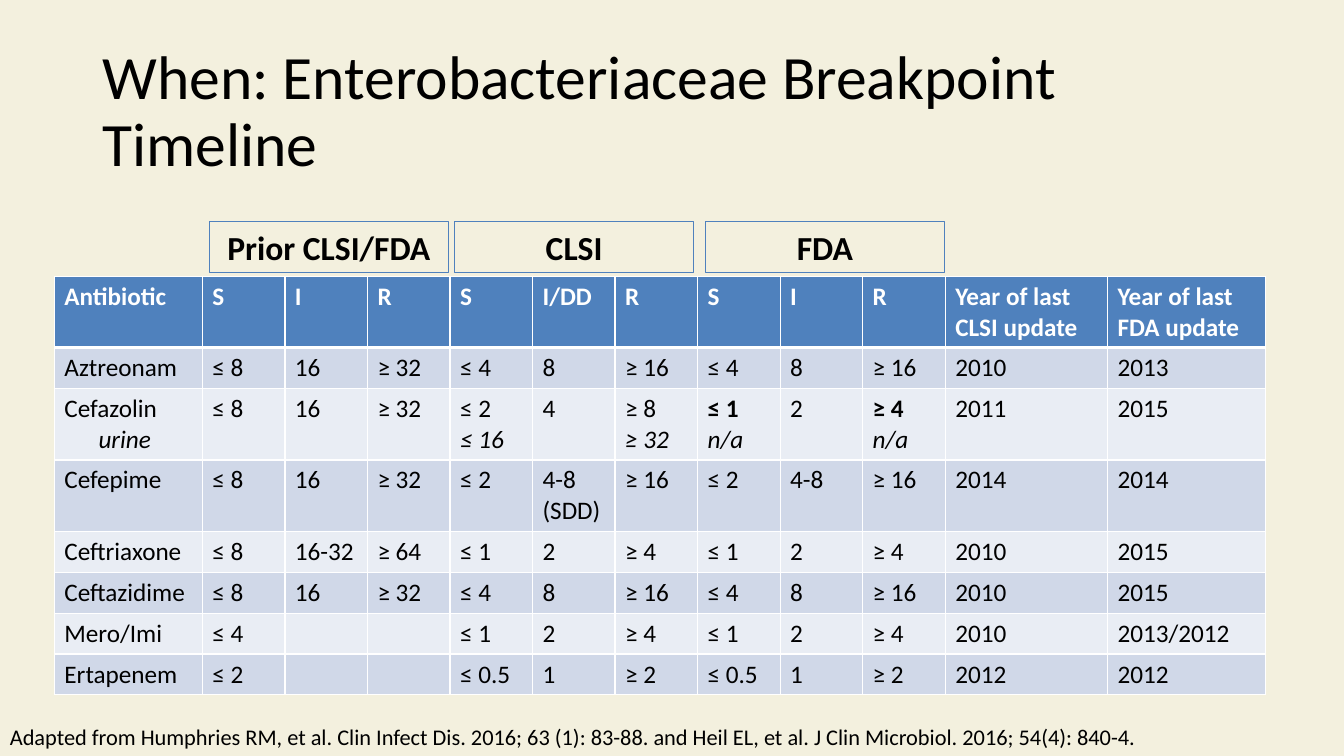
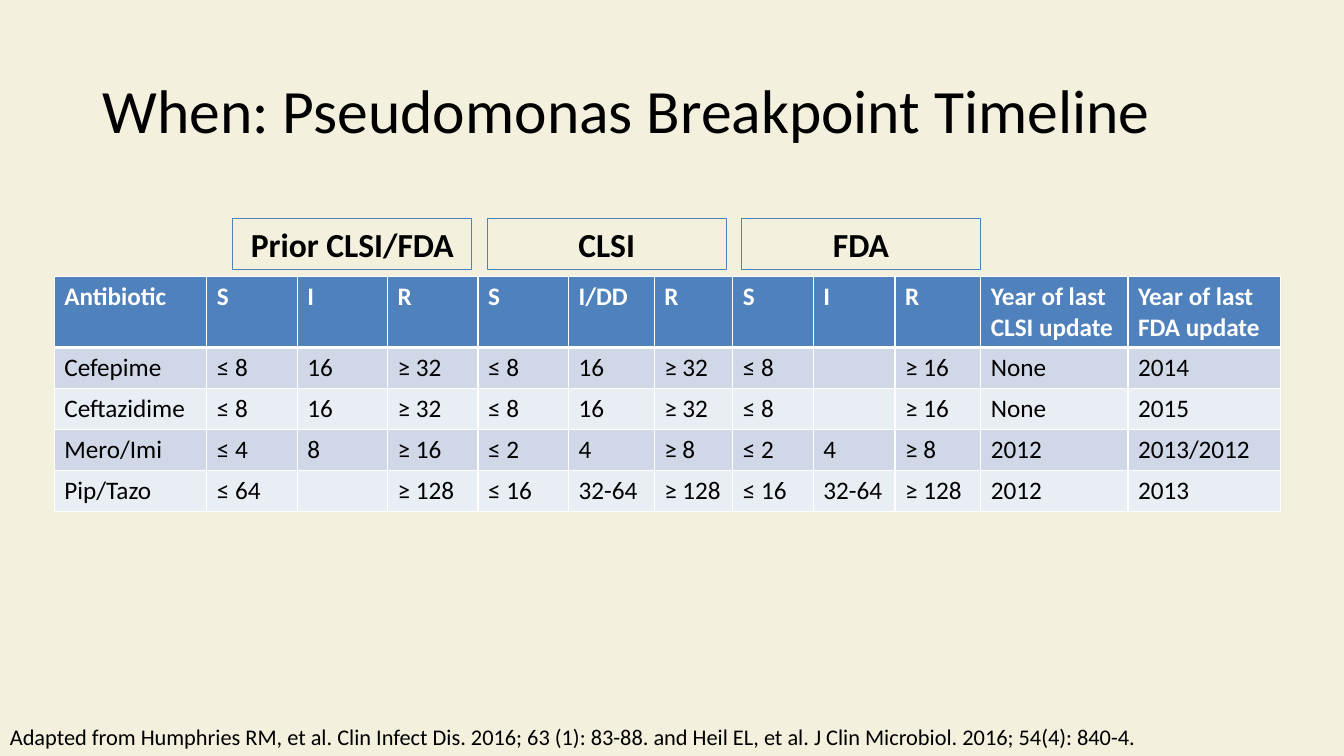
import pptx
import pptx.dml.color
import pptx.enum.shapes
import pptx.enum.text
import pptx.oxml
import pptx.oxml.ns
import pptx.util

Cm = pptx.util.Cm
Pt = pptx.util.Pt
RGB = pptx.dml.color.RGBColor
ALIGN = pptx.enum.text.PP_ALIGN
ANCHOR = pptx.enum.text.MSO_ANCHOR

# Shared look
CREAM = RGB(0xF3, 0xF0, 0xDE)
BLUE = RGB(0x4F, 0x81, 0xBD)
BAND = RGB(0xD0, 0xD8, 0xE8)
PALE = RGB(0xE9, 0xED, 0xF4)
BLACK = RGB(0, 0, 0)
WHITE = RGB(0xFF, 0xFF, 0xFF)
FONT = "Calibri"

# Shared wording
HEAD = "Antibiotic|S|I|R|S|I/DD|R|S|I|R|Year of last CLSI update|Year of last FDA update"
GROUPS = ["Prior CLSI/FDA", "CLSI", "FDA"]
CREDIT = ("Adapted from Humphries RM, et al. Clin Infect Dis. 2016; 63 (1): 83-88. "
          "and Heil EL, et al. J Clin Microbiol. 2016; 54(4): 840-4.")

# Row heights for one and two lines of text
LOW, TALL = 1.03, 1.8

# Content: cells split by |, lines by /n; a * marks a bold first line
SLIDES = [
    {
        "title": "When: Enterobacteriaceae Breakpoint Timeline",
        "cols": [3.73] + [2.08] * 9 + [4.09, 3.99],
        "tall": [0, 2, 3],
        "tops": 5.59,
        "lefts": [5.28, 11.46, 17.78],
        "rows": [
            "Aztreonam|≤ 8|16|≥ 32|≤ 4|8|≥ 16|≤ 4|8|≥ 16|2010|2013",
            "Cefazolin\nurine|≤ 8|16|≥ 32|≤ 2\n≤ 16|4|≥ 8\n≥ 32|*≤ 1\nn/a|2|*≥ 4\nn/a|2011|2015",
            "Cefepime|≤ 8|16|≥ 32|≤ 2|4-8 (SDD)|≥ 16|≤ 2|4-8|≥ 16|2014|2014",
            "Ceftriaxone|≤ 8|16-32|≥ 64|≤ 1|2|≥ 4|≤ 1|2|≥ 4|2010|2015",
            "Ceftazidime|≤ 8|16|≥ 32|≤ 4|8|≥ 16|≤ 4|8|≥ 16|2010|2015",
            "Mero/Imi|≤ 4|||≤ 1|2|≥ 4|≤ 1|2|≥ 4|2010|2013/2012",
            "Ertapenem|≤ 2|||≤ 0.5|1|≥ 2|≤ 0.5|1|≥ 2|2012|2012",
        ],
    },
    {
        "title": "When: Pseudomonas Breakpoint Timeline",
        "cols": [3.84] + [2.28] * 4 + [2.16, 1.98, 2.03, 2.06, 2.16, 3.71, 3.84],
        "tall": [0],
        "tops": 5.51,
        "lefts": [5.87, 12.28, 18.69],
        "rows": [
            "Cefepime|≤ 8|16|≥ 32|≤ 8|16|≥ 32|≤ 8||≥ 16|None|2014",
            "Ceftazidime|≤ 8|16|≥ 32|≤ 8|16|≥ 32|≤ 8||≥ 16|None|2015",
            "Mero/Imi|≤ 4|8|≥ 16|≤ 2|4|≥ 8|≤ 2|4|≥ 8|2012|2013/2012",
            "Pip/Tazo|≤ 64||≥ 128|≤ 16|32-64|≥ 128|≤ 16|32-64|≥ 128|2012|2013",
        ],
    },
]


def write(frame, text, size, color=BLACK, bold=False):
    """Fill a text frame and format every run in it."""
    frame.text = text
    frame.word_wrap = True
    for para in frame.paragraphs:
        for run in para.runs:
            run.font.name = FONT
            run.font.size = Pt(size)
            run.font.color.rgb = color
            run.font.bold = bold


def edge(cell, widths):
    """Draw white cell borders, widths in points by side."""
    props = cell._tc.get_or_add_tcPr()
    for side in "LRTB":
        props.append(pptx.oxml.parse_xml(
            f'<a:ln{side} {pptx.oxml.ns.nsdecls("a")} w="{Pt(widths[side])}">'
            f'<a:solidFill><a:srgbClr val="{WHITE}"/></a:solidFill></a:ln{side}>'))


deck = pptx.Presentation()
deck.slide_width, deck.slide_height = Cm(33.87), Cm(19.05)
back = deck.slide_master.background.fill
back.solid()
back.fore_color.rgb = CREAM

for data in SLIDES:
    slide = deck.slides.add_slide(deck.slide_layouts[6])
    shapes = slide.shapes

    # Title
    title = shapes.add_textbox(Cm(2.33), Cm(1.01), Cm(29.21), Cm(3.68)).text_frame
    write(title, data["title"], 44)
    title.vertical_anchor = ANCHOR.MIDDLE
    title.paragraphs[0].line_spacing = 0.9

    # Table
    rows = [line.split("|") for line in [HEAD] + data["rows"]]
    highs = [TALL if r in data["tall"] else LOW for r in range(len(rows))]
    table = shapes.add_table(len(rows), len(data["cols"]), Cm(1.37), Cm(6.96),
                             Cm(sum(data["cols"])), Cm(sum(highs))).table
    for col, width in zip(table.columns, data["cols"]):
        col.width = Cm(width)
    for r, row in enumerate(rows):
        table.rows[r].height = Cm(highs[r])
        for c, text in enumerate(row):
            cell = table.cell(r, c)
            edge(cell, {"L": 1, "R": 1, "T": 3 if r == 1 else 1, "B": 3 if r == 0 else 1})
            cell.fill.solid()
            cell.fill.fore_color.rgb = BLUE if r == 0 else BAND if r % 2 else PALE
            write(cell.text_frame, text.lstrip("*"), 18, BLACK if r else WHITE, r == 0)
            paras = cell.text_frame.paragraphs
            if text.startswith("*"):
                paras[0].runs[0].font.bold = True
            for para in paras[1:]:
                para.runs[0].font.italic = True
                if c == 0:
                    para._p.get_or_add_pPr().set("marL", str(Cm(0.86)))

    # Group labels above the table
    for left, name in zip(data["lefts"], GROUPS):
        box = shapes.add_shape(pptx.enum.shapes.MSO_SHAPE.RECTANGLE,
                               Cm(left), Cm(data["tops"]), Cm(6.02), Cm(1.28))
        box.shadow.inherit = False
        box.fill.background()
        box.line.color.rgb = BLUE
        box.line.width = Pt(0.75)
        write(box.text_frame, name, 24, bold=True)
        box.text_frame.vertical_anchor = ANCHOR.TOP
        box.text_frame.paragraphs[0].alignment = ALIGN.CENTER

    # Source line
    foot = shapes.add_textbox(0, Cm(18.11), Cm(33.58), Cm(0.94))
    write(foot.text_frame, CREDIT, 16)

deck.save("out.pptx")
